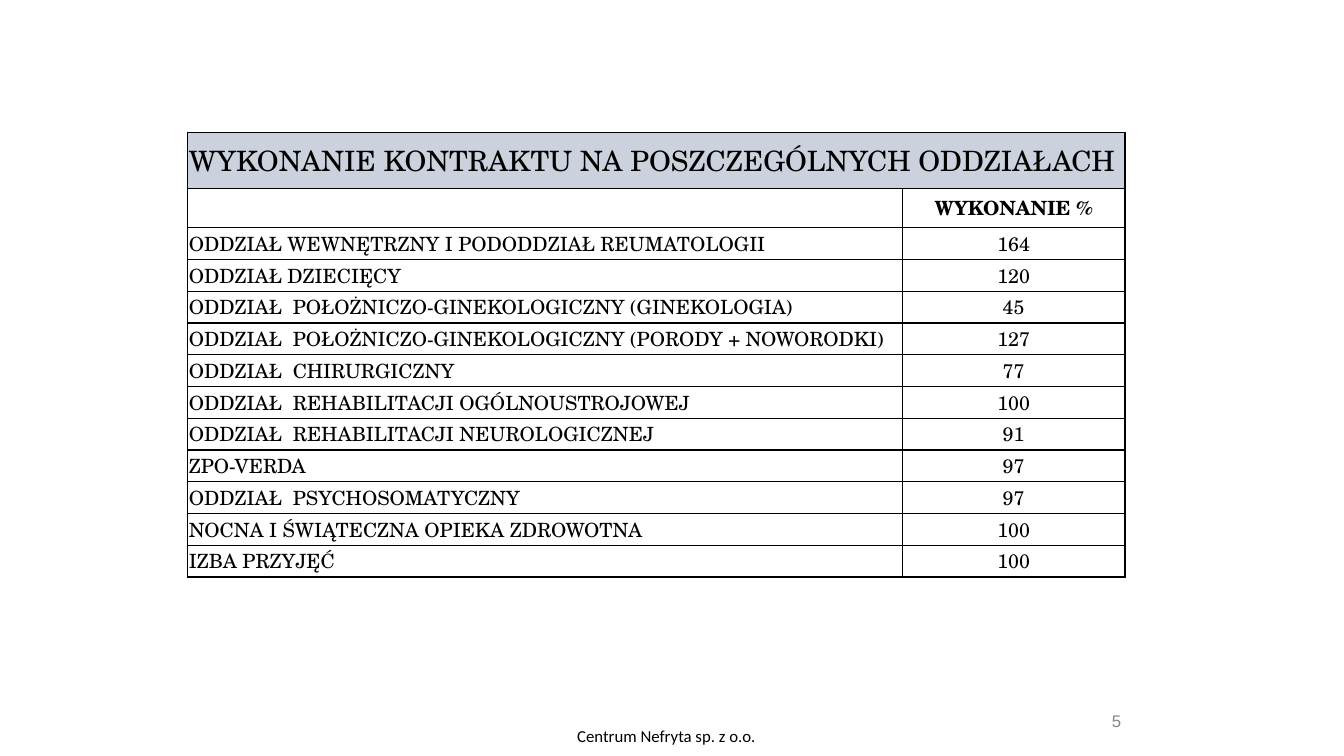
from dataclasses import dataclass

from lxml.etree import SubElement
from pptx import Presentation
from pptx.dml.color import RGBColor
from pptx.enum.text import MSO_ANCHOR as Anchor, PP_ALIGN as Align
from pptx.oxml.ns import qn
from pptx.util import Cm, Pt


@dataclass(frozen=True)
class Theme:
    ink: str = "000000"
    muted: str = "888888"
    band: str = "CCD2DD"
    table_font: str = "TeX Gyre Schola"
    footer_font: str = "Calibri"
    number_font: str = "Arial"
    heading_size: int = 20
    body_size: int = 14
    small_size: int = 12
    border_width: float = 1


HEADING = "WYKONANIE KONTRAKTU NA POSZCZEGÓLNYCH ODDZIAŁACH"
VALUE_HEADER = "WYKONANIE %"
WARDS = [
    ("ODDZIAŁ WEWNĘTRZNY I PODODDZIAŁ REUMATOLOGII", 164),
    ("ODDZIAŁ DZIECIĘCY", 120),
    ("ODDZIAŁ  POŁOŻNICZO-GINEKOLOGICZNY (GINEKOLOGIA)", 45),
    ("ODDZIAŁ  POŁOŻNICZO-GINEKOLOGICZNY (PORODY + NOWORODKI)", 127),
    ("ODDZIAŁ  CHIRURGICZNY", 77),
    ("ODDZIAŁ  REHABILITACJI OGÓLNOUSTROJOWEJ", 100),
    ("ODDZIAŁ  REHABILITACJI NEUROLOGICZNEJ", 91),
    ("ZPO-VERDA", 97),
    ("ODDZIAŁ  PSYCHOSOMATYCZNY", 97),
    ("NOCNA I ŚWIĄTECZNA OPIEKA ZDROWOTNA", 100),
    ("IZBA PRZYJĘĆ", 100),
]
SIDES = ("left", "right", "top", "bottom")
COLUMN_WIDTHS = (18.01, 5.61)
HEADING_HEIGHT, HEADER_HEIGHT, ROW_HEIGHT = 1.42, 0.99, 0.8


class SlideBuilder:
    def __init__(self, page, theme):
        self.page = page
        self.theme = theme

    def add_text(self, frame, text, font, size, color, align=Align.LEFT, bold=False):
        para = frame.paragraphs[0]
        para.alignment = align
        span = para.add_run()
        span.text = text
        for name, value in {"name": font, "size": Pt(size), "bold": bold}.items():
            setattr(span.font, name, value)
        span.font.color.rgb = RGBColor.from_string(color)

    def text_box(self, position, text, font, color, align, **frame_format):
        box = self.page.shapes.add_textbox(*map(Cm, position))
        frame = box.text_frame
        settings = {"word_wrap": True, "vertical_anchor": Anchor.MIDDLE, **frame_format}
        for name, value in settings.items():
            setattr(frame, name, value)
        self.add_text(frame, text, font, self.theme.small_size, color, align)

    def border(self, cell):
        properties = cell._tc.get_or_add_tcPr()
        for side in ("lnL", "lnR", "lnT", "lnB"):
            line = SubElement(properties, qn(f"a:{side}"),
                              w=str(Pt(self.theme.border_width)))
            fill = SubElement(line, qn("a:solidFill"))
            SubElement(fill, qn("a:srgbClr"), val=self.theme.ink)

    def table(self, left, top, widths, heights):
        """Add an unfilled table with a border around every cell."""
        frame = self.page.shapes.add_table(
            len(heights), len(widths), Cm(left), Cm(top),
            Cm(sum(widths)), Cm(sum(heights)))
        grid = frame.table
        grid.first_row = grid.horz_banding = False
        for column, width in zip(grid.columns, widths):
            column.width = Cm(width)
        for row, height in zip(grid.rows, heights):
            row.height = Cm(height)
        for cell in grid.iter_cells():
            self.border(cell)
            cell.fill.background()
            for side in SIDES:
                setattr(cell, f"margin_{side}", Cm(0.03))
        return grid

    def cell_text(self, cell, text, size=None, anchor=Anchor.TOP, **style):
        cell.vertical_anchor = anchor
        self.add_text(cell.text_frame, text, self.theme.table_font,
                      size or self.theme.body_size, self.theme.ink, **style)

    def ward_table(self, left, top):
        heights = [HEADING_HEIGHT, HEADER_HEIGHT] + [ROW_HEIGHT] * len(WARDS)
        grid = self.table(left, top, COLUMN_WIDTHS, heights)
        heading = grid.cell(0, 0)
        heading.merge(grid.cell(0, 1))
        heading.fill.solid()
        heading.fill.fore_color.rgb = RGBColor.from_string(self.theme.band)
        self.cell_text(heading, HEADING, self.theme.heading_size, Anchor.MIDDLE)
        self.cell_text(grid.cell(1, 1), VALUE_HEADER, anchor=Anchor.MIDDLE,
                       align=Align.CENTER, bold=True)
        for row, (ward, percent) in enumerate(WARDS, start=2):
            self.cell_text(grid.cell(row, 0), ward)
            self.cell_text(grid.cell(row, 1), str(percent), align=Align.CENTER)


def main():
    deck = Presentation()
    deck.slide_width, deck.slide_height = Cm(33.87), Cm(19.05)
    blank_layout = deck.slide_layouts[6]
    theme = Theme()
    builder = SlideBuilder(deck.slides.add_slide(blank_layout), theme)

    margins = {f"margin_{side}": Cm(0.13) for side in SIDES}
    builder.text_box((27.89, 17.78, 0.48, 0.76), "5", theme.number_font,
                     theme.muted, Align.RIGHT, word_wrap=False, **margins)
    builder.ward_table(4.73, 3.33)
    builder.text_box((11.13, 18.03, 11.43, 1.02), "Centrum Nefryta sp. z o.o. ",
                     theme.footer_font, theme.ink, Align.CENTER)
    deck.save("out.pptx")


if __name__ == "__main__":
    main()
